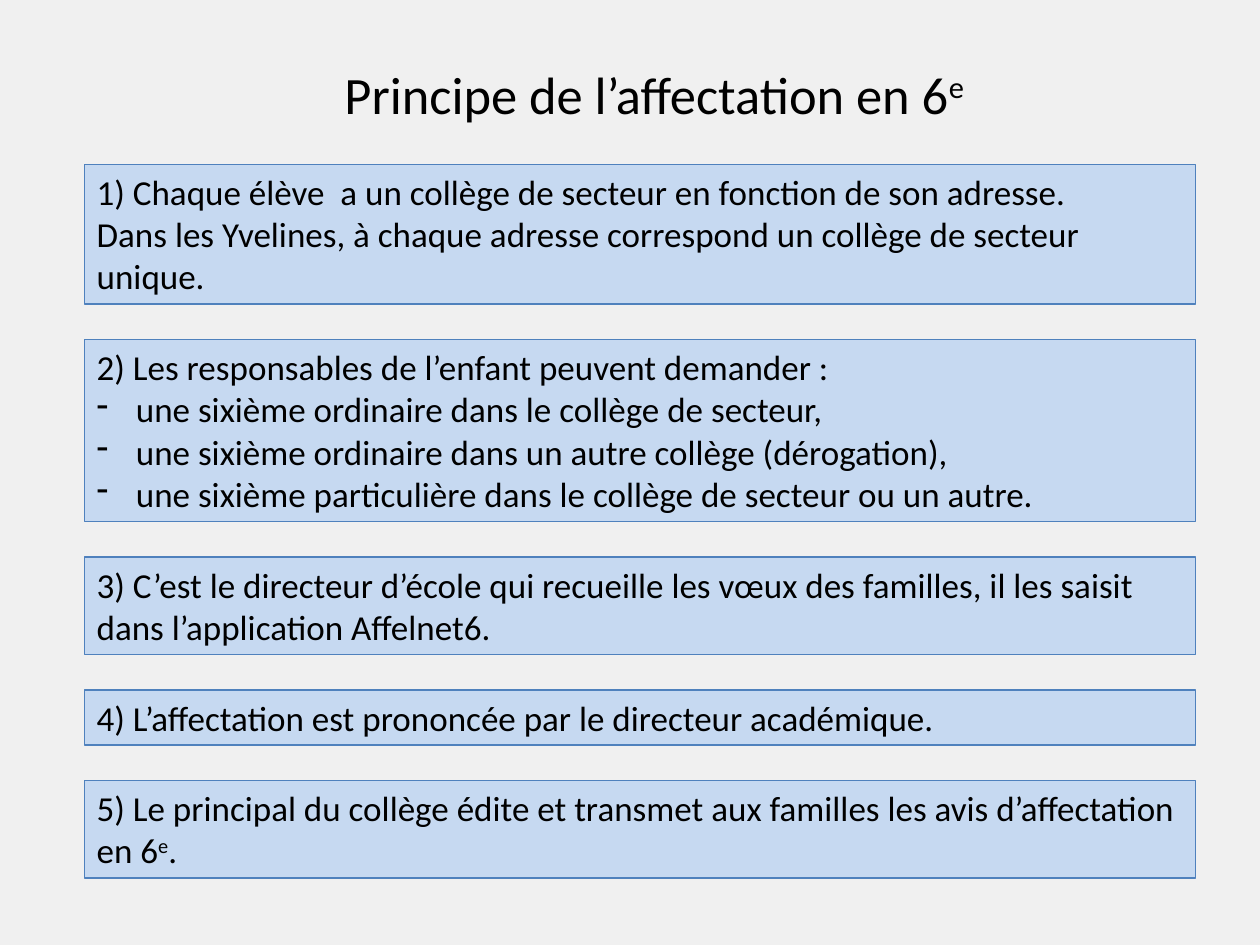
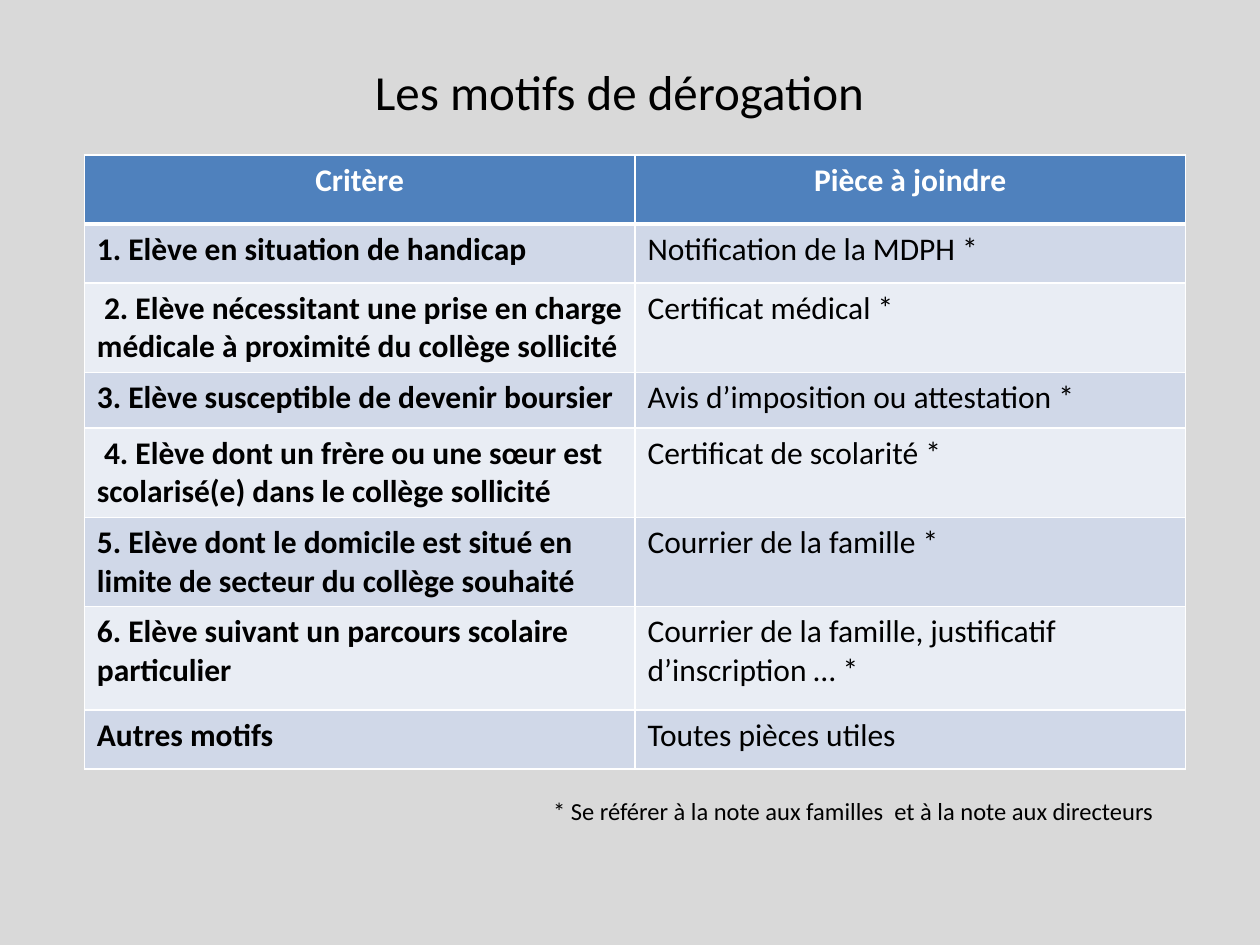
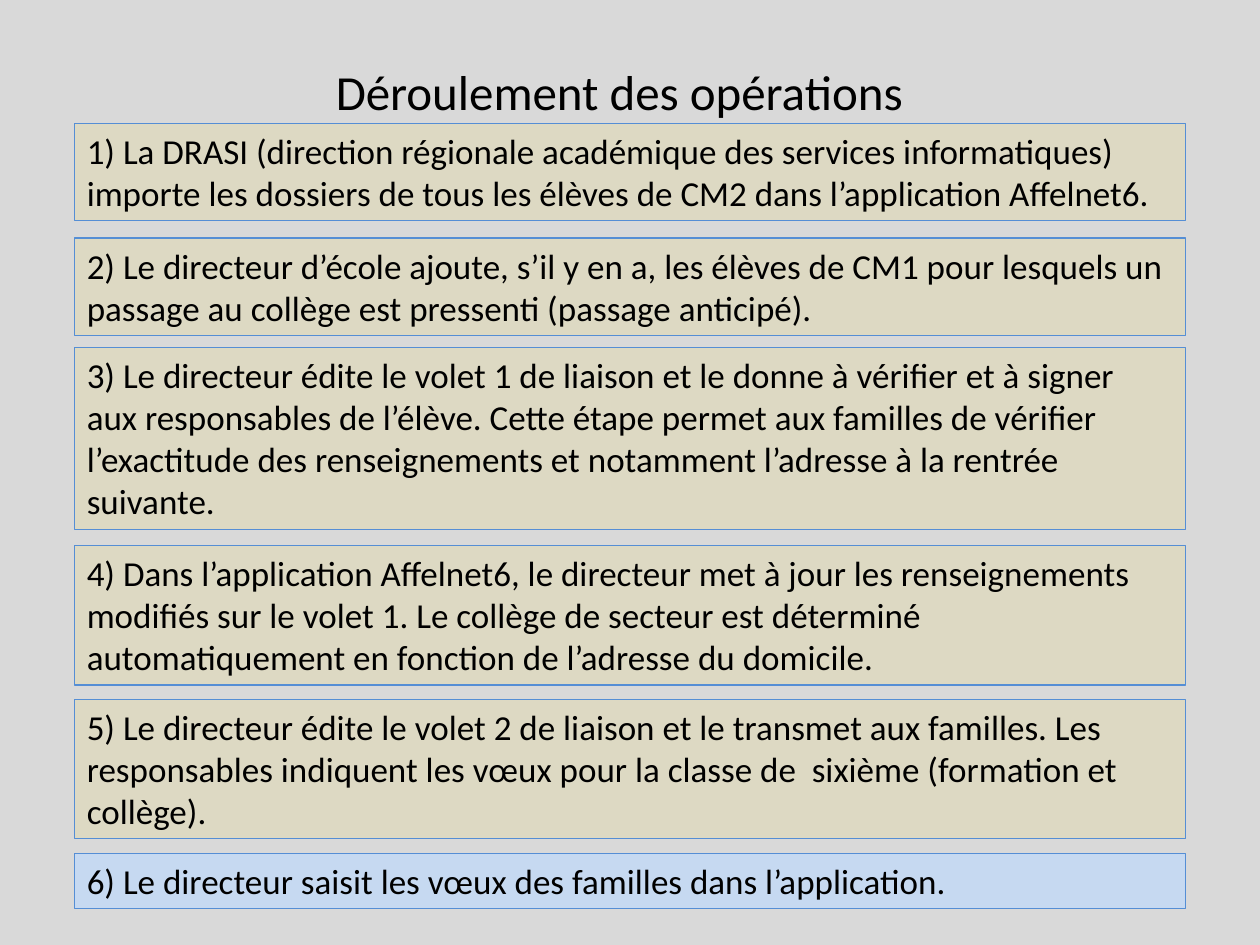
from lxml import etree
from pptx import Presentation
from pptx.dml.color import RGBColor
from pptx.enum import shapes, text
from pptx.oxml import ns
from pptx.util import Cm, Pt

FONT = "Calibri"
BLACK = RGBColor(0x00, 0x00, 0x00)
WHITE = RGBColor(0xFF, 0xFF, 0xFF)
PALE_GREY = RGBColor(0xF0, 0xF0, 0xF0)
GREY = RGBColor(0xD9, 0xD9, 0xD9)
LIGHT_BLUE = RGBColor(0xC6, 0xD9, 0xF1)
BEIGE = RGBColor(0xDD, 0xD9, 0xC3)
BLUE = RGBColor(0x4F, 0x81, 0xBD)
BRIGHT_BLUE = RGBColor(0x55, 0x8E, 0xD5)
ROW_FILLS = (RGBColor(0xD0, 0xD8, 0xE8), RGBColor(0xE9, 0xED, 0xF4))

# In the texts, ^ opens and closes a superscript and "- " starts a bullet.
# Boxes: gap above in cm, lines shown, fill, paragraphs.
PRINCIPLE_GAP = 0.72
PRINCIPLES = [
    (0, 3, LIGHT_BLUE, [
        "1) Chaque élève  a un collège de secteur en fonction de son adresse.",
        "Dans les Yvelines, à chaque adresse correspond un collège de secteur unique."]),
    (PRINCIPLE_GAP, 4, LIGHT_BLUE, [
        "2) Les responsables de l’enfant peuvent demander :",
        "- une sixième ordinaire dans le collège de secteur,",
        "- une sixième ordinaire dans un autre collège (dérogation),",
        "- une sixième particulière dans le collège de secteur ou un autre."]),
    (PRINCIPLE_GAP, 2, LIGHT_BLUE, [
        "3) C’est le directeur d’école qui recueille les vœux des familles, "
        "il les saisit dans l’application Affelnet6."]),
    (PRINCIPLE_GAP, 1, LIGHT_BLUE, [
        "4) L’affectation est prononcée par le directeur académique."]),
    (PRINCIPLE_GAP, 2, LIGHT_BLUE, [
        "5) Le principal du collège édite et transmet aux familles les avis "
        "d’affectation en 6^e^."]),
]
OPERATIONS = [
    (0, 2, BEIGE, [
        "1) La DRASI (direction régionale académique des services informatiques) "
        "importe les dossiers de tous les élèves de CM2 dans l’application Affelnet6."]),
    (0.35, 2, BEIGE, [
        "2) Le directeur d’école ajoute, s’il y en a, les élèves de CM1 pour lesquels "
        "un passage au collège est pressenti (passage anticipé)."]),
    (0.25, 4, BEIGE, [
        "3) Le directeur édite le volet 1 de liaison et le donne à vérifier et à signer "
        "aux responsables de l’élève. Cette étape permet aux familles de vérifier "
        "l’exactitude des renseignements et notamment l’adresse à la rentrée suivante."]),
    (0.33, 3, BEIGE, [
        "4) Dans l’application Affelnet6, le directeur met à jour les renseignements "
        "modifiés sur le volet 1. Le collège de secteur est déterminé automatiquement "
        "en fonction de l’adresse du domicile."]),
    (0.29, 3, BEIGE, [
        "5) Le directeur édite le volet 2 de liaison et le transmet aux familles. Les "
        "responsables indiquent les vœux pour la classe de  sixième (formation et collège)."]),
    (0.29, 1, LIGHT_BLUE, [
        "6) Le directeur saisit les vœux des familles dans l’application."]),
]
# Row height in cm, criterion, document
CRITERIA = [
    (1.4, "Critère", "Pièce à joindre"),
    (1.19, "1. Elève en situation de handicap", "Notification de la MDPH *"),
    (1.8, " 2. Elève nécessitant une prise en charge médicale à proximité du collège sollicité",
     "Certificat médical *"),
    (1.12, "3. Elève susceptible de devenir boursier", "Avis d’imposition ou attestation *"),
    (1.8, " 4. Elève dont un frère ou une sœur est scolarisé(e) dans le collège sollicité",
     "Certificat de scolarité *"),
    (1.8, "5. Elève dont le domicile est situé en limite de secteur du collège souhaité",
     "Courrier de la famille *"),
    (2.08, "6. Elève suivant un parcours scolaire particulier",
     "Courrier de la famille, justificatif d’inscription … *"),
    (1.19, "Autres motifs", "Toutes pièces utiles"),
]
FOOTNOTE = "* Se référer à la note aux familles  et à la note aux directeurs"

BOX_WIDTH = 22.4
LINE_HEIGHT, BOX_PADDING = 0.85, 0.26
COLUMN_WIDTH = 11.1


def add_bullet(paragraph):
    properties = paragraph._p.get_or_add_pPr()
    properties.set("marL", str(Cm(0.79)))
    properties.set("indent", str(-Cm(0.79)))
    etree.SubElement(properties, ns.qn("a:buChar")).set("char", "-")


def write(frame, lines, size, color=BLACK, bold=False, align=text.PP_ALIGN.LEFT):
    frame.word_wrap = True
    frame.vertical_anchor = text.MSO_ANCHOR.TOP
    for number, line in enumerate(lines):
        paragraph = frame.add_paragraph() if number else frame.paragraphs[0]
        paragraph.alignment = align
        if line.startswith("- "):
            add_bullet(paragraph)
            line = line[2:]
        for part, words in enumerate(line.split("^")):
            if not words:
                continue
            run = paragraph.add_run()
            run.text = words
            run.font.name, run.font.size = FONT, Pt(size)
            run.font.bold, run.font.color.rgb = bold, color
            if part % 2:
                run._r.get_or_add_rPr().set("baseline", "30000")


def add_text(slide, words, place, size, align=text.PP_ALIGN.LEFT):
    box = slide.shapes.add_textbox(*map(Cm, place))
    write(box.text_frame, [words], size, align=align)


def add_slide(deck, background, title, title_place, title_size):
    slide = deck.slides.add_slide(deck.slide_layouts[6])
    slide.background.fill.solid()
    slide.background.fill.fore_color.rgb = background
    add_text(slide, title, title_place, title_size, text.PP_ALIGN.CENTER)
    return slide


def stack_boxes(slide, left, top, boxes, outline):
    for gap, line_count, fill, lines in boxes:
        top += gap
        height = BOX_PADDING + LINE_HEIGHT * line_count
        box = slide.shapes.add_shape(shapes.MSO_SHAPE.RECTANGLE,
                                     *map(Cm, (left, top, BOX_WIDTH, height)))
        box.shadow.inherit = False
        box.fill.solid()
        box.fill.fore_color.rgb = fill
        box.line.color.rgb = outline
        box.line.width = Pt(0.75)
        write(box.text_frame, lines, 20)
        top += height


def set_borders(cell, widths):
    """Draw white borders; widths are in points: left, right, top, bottom."""
    properties = cell._tc.get_or_add_tcPr()
    for position, (side, width) in enumerate(zip("LRTB", widths)):
        border = etree.Element(ns.qn(f"a:ln{side}"), w=str(Pt(width)))
        fill = etree.SubElement(border, ns.qn("a:solidFill"))
        etree.SubElement(fill, ns.qn("a:srgbClr")).set("val", str(WHITE))
        properties.insert(position, border)


def add_criteria_table(slide, left, top):
    height = sum(row[0] for row in CRITERIA)
    table = slide.shapes.add_table(
        len(CRITERIA), 2, *map(Cm, (left, top, 2 * COLUMN_WIDTH, height))).table
    for r, (row_height, *entries) in enumerate(CRITERIA):
        header = r == 0
        table.rows[r].height = Cm(row_height)
        for c, entry in enumerate(entries):
            cell = table.cell(r, c)
            cell.fill.solid()
            cell.fill.fore_color.rgb = BLUE if header else ROW_FILLS[(r - 1) % 2]
            set_borders(cell, (1, 1, 3 if r == 1 else 1, 3 if header else 1))
            write(cell.text_frame, [entry], 18, WHITE if header else BLACK,
                  bold=header or c == 0,
                  align=text.PP_ALIGN.CENTER if header else text.PP_ALIGN.LEFT)


def main():
    deck = Presentation()
    deck.slide_width, deck.slide_height = Cm(25.4), Cm(19.05)
    title_place = (4.7, 1.12, 15.57, 1.6)

    principles = add_slide(deck, PALE_GREY, "Principe de l’affectation en 6^e^",
                           (5.89, 1.12, 14.6, 1.8), 30)
    stack_boxes(principles, 1.7, 3.32, PRINCIPLES, BLUE)

    reasons = add_slide(deck, GREY, "Les motifs de dérogation", title_place, 28)
    add_criteria_table(reasons, 1.7, 3.12)
    add_text(reasons, FOOTNOTE, (10.9, 15.93, 12.8, 0.86), 14)

    operations = add_slide(deck, GREY, "Déroulement des opérations", title_place, 28)
    stack_boxes(operations, 1.5, 2.49, OPERATIONS, BRIGHT_BLUE)

    deck.save("out.pptx")


if __name__ == "__main__":
    main()
